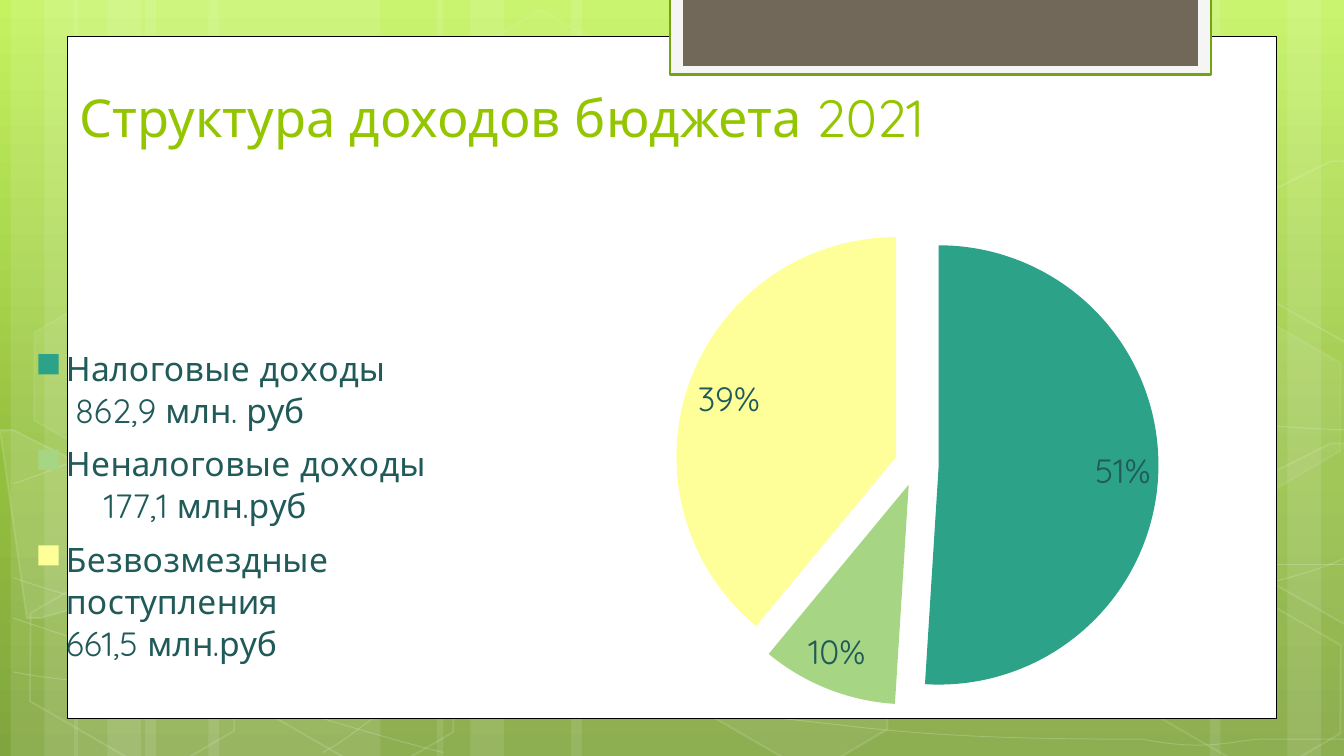
from copy import deepcopy
from typing import NamedTuple, Optional

from lxml.etree import SubElement
from pptx import Presentation
from pptx.chart.data import CategoryChartData
from pptx.dml.color import RGBColor
from pptx.enum.chart import XL_CHART_TYPE as CT, XL_LABEL_POSITION as LP, XL_LEGEND_POSITION as LEG
from pptx.enum.shapes import MSO_SHAPE as SHAPE
from pptx.enum.text import MSO_ANCHOR, MSO_AUTO_SIZE, PP_ALIGN
from pptx.oxml import parse_xml
from pptx.oxml.ns import nsdecls, qn
from pptx.util import Inches, Pt

CELL = Inches(0.1)
COLS, ROWS = 100, 56.25
FONT = "Quicksand"

WHITE = RGBColor(0xFF, 0xFF, 0xFF)
BLACK = RGBColor(0x00, 0x00, 0x00)
PALE = RGBColor(0xF5, 0xF5, 0xF5)
TAUPE = RGBColor(0x71, 0x68, 0x5A)
GREEN = RGBColor(0x74, 0xA5, 0x10)
LIME = RGBColor(0x94, 0xC6, 0x00)
DARK_TEAL = RGBColor(0x20, 0x5A, 0x59)
GRADIENT = [(0, RGBColor(0xC3, 0xF3, 0x5F)), (0.62, RGBColor(0x93, 0xBF, 0x3F)),
            (1, RGBColor(0x81, 0xA5, 0x3E))]


class Box(NamedTuple):
    col: float
    row: float
    cols: float
    rows: float


class Paint(NamedTuple):
    color: RGBColor
    alpha: int = 100
    width: float = 0


class Hexagon(NamedTuple):
    col: float
    row: float
    fill: int
    line: int


class Polygon(NamedTuple):
    points: list
    fill: int


class Income(NamedTuple):
    label: str
    percent: int
    color: RGBColor


STRIPES = [(10.8, 17.5), (0.8, 5), (3.3, 8.3), (15.5, 17.5), (5.5, 5), (8, 8.3),
           (73.3, 17.5), (95.8, 5), (90, 8.3), (42.5, 30.8), (32.5, 5), (35, 8.3)]

CURVES = [
    [(0.7, 50.5), (6.1, 50.7), (11.5, 50.9), (19, 50.8), (26.5, 50.7), (35.8, 50.6), (45.8, 49.9),
     (55.8, 49.1), (70, 47.7), (79.2, 46.3), (88.3, 44.8), (97.7, 42.6), (100.7, 41.3)],
    [(0.7, 35.7), (3.6, 34.6), (6.5, 33.5), (12.1, 32.3), (17.8, 31.2), (25.9, 29.6), (34.7, 29),
     (43.6, 28.5), (54.4, 28.4), (65.4, 29), (76.4, 29.6), (94.7, 31.9), (100.7, 32.5)],
    [(0.6, 46.3), (12.7, 50.4), (24.7, 54.5), (33.4, 56.2)],
    [(0.7, 43.3), (3.8, 44.2), (7, 45), (12.8, 46.2), (18.6, 47.4), (27.3, 49.2), (35.7, 50.5),
     (44, 51.7), (54.5, 53.1), (62.8, 53.9), (71.1, 54.7), (80, 55), (85.3, 55.2),
     (90.5, 55.5), (91.9, 55.4), (94.5, 55.3), (97.1, 55.3), (98.9, 55.2), (100.7, 55)],
    [(24.2, 56.2), (26, 54.7), (27.8, 53.2), (30.2, 51.8), (32.6, 50.4), (36, 48.9), (38.8, 47.9),
     (41.6, 46.9), (43.3, 46.4), (47, 45.7), (50.6, 44.9), (57.3, 43.8), (60.8, 43.3),
     (64.4, 42.8), (64.9, 42.9), (68, 42.7), (71.1, 42.5), (76, 42.3), (79.4, 42.2),
     (82.9, 42.1), (88.6, 42.2), (88.6, 42.2), (91, 42.2), (93, 42.2), (95.3, 42.2),
     (97.1, 42.2), (98.8, 42.3), (100.6, 42.5)],
]

HEXAGONS = [Hexagon(33.4, 2.7, 4, 8), Hexagon(49.7, 44.2, 6, 12), Hexagon(1.1, 44.3, 0, 12),
            Hexagon(1.4, 23.4, 7, 8), Hexagon(17.4, 44.4, 0, 12), Hexagon(83.4, 44.5, 0, 12),
            Hexagon(83.4, 23.5, 7, 8)]

POLYGONS = [
    Polygon([(0, 32.5), (1, 32.1), (8.6, 36.5), (9.5, 43.6), (2.9, 46.4), (1.8, 45.7)], 10),
    Polygon([(92.6, 35.6), (99.2, 32.8), (99.9, 33.2), (101.8, 46.8), (101.2, 47.1), (93.5, 42.7)], 4),
    Polygon([(92.6, 14.7), (99.2, 11.9), (100, 12.4), (101.8, 26), (101.2, 26.2), (93.5, 21.8)], 0),
]

INCOMES = [
    Income("Налоговые доходы\n 862,9 млн. руб", 51, RGBColor(0x2C, 0xA2, 0x88)),
    Income("Неналоговые доходы\n\t177,1 млн.руб", 10, RGBColor(0xA6, 0xD5, 0x84)),
    Income("Безвозмездные поступления\n661,5 млн.руб", 39, RGBColor(0xFF, 0xFF, 0x99)),
]


def grid(box: Box) -> list[int]:
    return [round(v * CELL) for v in box]


def set_alpha(parent, alpha: int) -> None:
    if alpha < 100:
        color = next(parent.iter(qn("a:srgbClr")))
        SubElement(color, qn("a:alpha")).set("val", str(alpha * 1000))


def paint(sp, fill: Optional[Paint] = None, line: Optional[Paint] = None) -> None:
    sp.shadow.inherit = False
    props = sp.element.spPr
    if fill and fill.alpha:
        sp.fill.solid()
        sp.fill.fore_color.rgb = fill.color
        set_alpha(props.find(qn("a:solidFill")), fill.alpha)
    else:
        sp.fill.background()
    if line:
        sp.line.color.rgb = line.color
        sp.line.width = Pt(line.width)
        set_alpha(props.find(qn("a:ln")), line.alpha)
    else:
        sp.line.fill.background()


def add_preset(s, kind, box: Box, fill: Optional[Paint], line: Optional[Paint] = None):
    sp = s.shapes.add_shape(kind, *grid(box))
    paint(sp, fill, line)
    return sp


def add_outline(s, points: list, closed: bool, fill: Optional[Paint], line: Paint):
    builder = s.shapes.build_freeform(*points[0], scale=CELL)
    builder.add_line_segments(points[1:], close=closed)
    sp = builder.convert_to_shape()
    paint(sp, fill, line)
    return sp


def add_curve(s, points: list, line: Paint) -> None:
    sp = add_outline(s, points, False, None, line)
    segments = list(sp.element.iter(qn("a:lnTo")))
    for i in range(0, len(segments), 3):
        first, *others = segments[i:i + 3]
        first.tag = qn("a:cubicBezTo")
        for other in others:
            first.append(other[0])
            other.getparent().remove(other)


def set_background(s) -> None:
    fill = s.background.fill
    fill.gradient()
    fill.gradient_angle = 270
    stops = next(s.element.iter(qn("a:gsLst")))
    stops.append(deepcopy(stops[0]))
    for stop, (position, color) in zip(fill.gradient_stops, GRADIENT):
        stop.position = position
        stop.color.rgb = color


def add_decor(s) -> None:
    for col, cols in STRIPES:
        add_preset(s, SHAPE.RECTANGLE, Box(col, 0, cols, ROWS), Paint(WHITE, 10))
    for points in CURVES:
        add_curve(s, points, Paint(WHITE, 20, 0.5))
    for h in HEXAGONS:
        sp = add_preset(s, SHAPE.HEXAGON, Box(h.col, h.row, 17.5, 11.4),
                        Paint(WHITE, h.fill), Paint(WHITE, h.line, 1))
        sp.adjustments[0] = 0.285
        sp.rotation = 30
    for polygon in POLYGONS:
        add_outline(s, polygon.points, True, Paint(WHITE, polygon.fill), Paint(WHITE, 12, 1))
    add_preset(s, SHAPE.RECTANGLE, Box(5, 2.7, 90, 50.74), Paint(WHITE), Paint(BLACK, width=0.5))
    add_preset(s, SHAPE.RECTANGLE, Box(49.86, -0.2, 40.24, 5.74), Paint(PALE), Paint(GREEN, width=1.25))
    add_preset(s, SHAPE.RECTANGLE, Box(50.84, -0.2, 38.3, 5.12), Paint(TAUPE))


def set_title(s, text: str) -> None:
    sp = s.shapes.title
    sp.left, sp.top, sp.width, sp.height = grid(Box(5.9, 2.94, 74.8, 9.1))
    tf = sp.text_frame
    tf.text = text
    tf.auto_size = MSO_AUTO_SIZE.NONE
    tf.vertical_anchor = MSO_ANCHOR.MIDDLE
    tf.margin_left = tf.margin_right = tf.margin_top = tf.margin_bottom = 0
    p = tf.paragraphs[0]
    p.alignment = PP_ALIGN.LEFT
    p.line_spacing = 1.5
    font = p.runs[0].font
    font.name, font.size, font.color.rgb = FONT, Pt(28), LIME
    sp.element.getparent().append(sp.element)


def manual_layout(x: float, y: float, w: float, h: float, inner: bool = False):
    target = '<c:layoutTarget val="inner"/>' if inner else ""
    return parse_xml(
        f'<c:layout {nsdecls("c")}><c:manualLayout>{target}<c:xMode val="edge"/><c:yMode val="edge"/>'
        f'<c:x val="{x}"/><c:y val="{y}"/><c:w val="{w}"/><c:h val="{h}"/></c:manualLayout></c:layout>')


def add_pie(s) -> None:
    data = CategoryChartData()
    data.categories = [income.label for income in INCOMES]
    data.add_series("Series 1", [income.percent for income in INCOMES])
    chart = s.shapes.add_chart(CT.PIE, *grid(Box(0, 10.8, 96.1, 44.4)), data).chart
    chart.has_title = False
    chart.font.name, chart.font.size, chart.font.color.rgb = FONT, Pt(18), DARK_TEAL

    chart.has_legend = True
    chart.legend.position = LEG.RIGHT
    chart.legend.include_in_layout = False
    root = chart.element
    next(root.iter(qn("c:legendPos"))).addnext(manual_layout(0.02, 0.32, 0.32, 0.57))
    area = next(root.iter(qn("c:plotArea")))
    for old in area.findall(qn("c:layout")):
        area.remove(old)
    area.insert(0, manual_layout(0.43, 0.13, 0.56, 0.81, inner=True))

    plot = chart.plots[0]
    plot.vary_by_categories = True
    explosion = parse_xml(f'<c:explosion {nsdecls("c")} val="10"/>')
    next(root.iter(qn("c:ser"))).find(qn("c:tx")).addnext(explosion)
    for i, income in enumerate(INCOMES):
        fill = plot.series[0].points[i].format.fill
        fill.solid()
        fill.fore_color.rgb = income.color
    plot.has_data_labels = True
    labels = plot.data_labels
    labels.show_percentage, labels.show_value = True, False
    labels.number_format, labels.number_format_is_linked = "0%", False
    labels.position = LP.BEST_FIT


def main() -> None:
    prs = Presentation()
    prs.slide_width, prs.slide_height = round(COLS * CELL), round(ROWS * CELL)
    s = prs.slides.add_slide(prs.slide_layouts[5])
    set_background(s)
    add_decor(s)
    set_title(s, "Структура доходов бюджета 2021")
    add_pie(s)
    prs.save("out.pptx")


if __name__ == "__main__":
    main()
